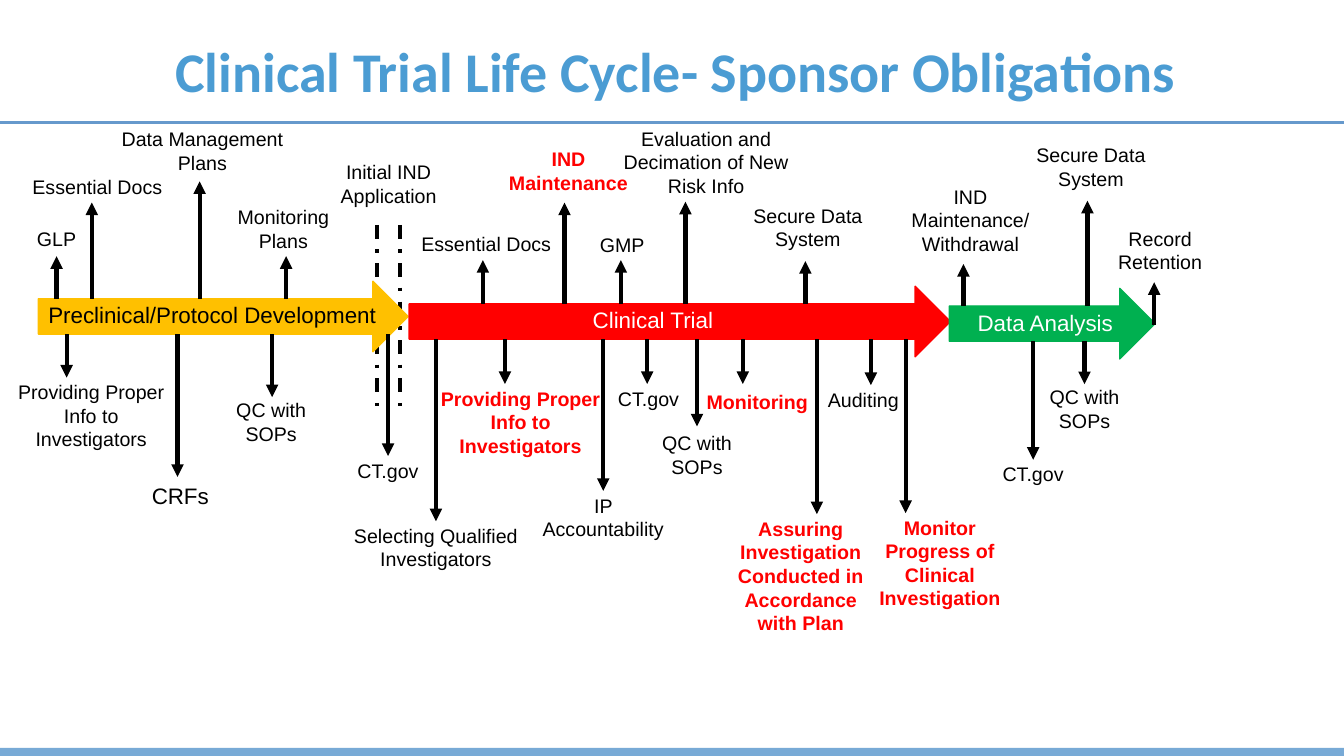
from dataclasses import dataclass
from typing import NamedTuple

from lxml.etree import SubElement
from pptx import Presentation
from pptx.dml.color import RGBColor
from pptx.enum.dml import MSO_LINE as Dash
from pptx.enum.shapes import MSO_CONNECTOR as Connector, MSO_SHAPE as Shape
from pptx.enum.text import MSO_ANCHOR as Anchor, MSO_AUTO_SIZE as AutoSize, PP_ALIGN as Align
from pptx.oxml.ns import qn
from pptx.util import Pt


@dataclass(frozen=True)
class Theme:
    title_blue: str = "4B9CD3"
    rule_blue: str = "6699CC"
    footer_blue: str = "78AAD6"
    black: str = "000000"
    white: str = "FFFFFF"
    amber: str = "FFC000"
    red: str = "FF0000"
    green: str = "00B050"
    title_font: str = "Calibri"
    body_font: str = "Arial"
    title_size: float = 40
    phase_size: float = 16
    label_size: float = 14


THEME = Theme()
PAGE_WIDTH, PAGE_HEIGHT = 960, 540
WIDE, MEDIUM, NARROW = 134.6, 108, 95


class Box(NamedTuple):
    left: float
    top: float
    width: float
    height: float

    def lengths(self):
        return [Pt(value) for value in self]


@dataclass(frozen=True)
class Duty:
    """A label on a stem: reach is negative upwards, shift moves the label off the stem."""
    text: str
    stem: float
    reach: float
    shift: float = 0
    width: float = WIDE
    lines: int = 1
    gap: float = -1.7
    key: bool = False
    size: float = THEME.label_size
    drop: float = 0


@dataclass(frozen=True)
class Phase:
    name: str
    box: Box
    color: str
    text_color: str
    caption_left: float
    caption_width: float
    duties: tuple


PRECLINICAL = Phase(
    "Preclinical/Protocol Development", Box(27.4, 200.9, 264.2, 50.4),
    THEME.amber, THEME.black, 0, 270, (
        Duty("GLP", 13, -30.5, gap=0),
        Duty("Essential Docs", 38.2, -68.8, 4, gap=1),
        Duty("Data Management Plans", 115.2, -84, 2, 140, 2, -0.7),
        Duty("Monitoring Plans", 177, -30.5, -2, NARROW, 2, 1.5),
        Duty("Providing Proper Info to Investigators", 20.2, 31, 17.6, lines=3),
        Duty("CRFs", 99.4, 102, 2, gap=0, size=THEME.phase_size),
        Duty("QC with SOPs", 167, 45, -0.7, NARROW, 2, -3),
        Duty("CT.gov", 249.8, 87),
    ))
TRIAL = Phase(
    "Clinical Trial", Box(292.3, 204.5, 386.6, 50.4),
    THEME.red, THEME.white, 124, 179, (
        Duty("Essential Docs", 52.6, -31.3, 2.5, gap=0.7),
        Duty("IND Maintenance", 110.9, -72.4, 2.9, MEDIUM, 2, key=True),
        Duty("GMP", 151.2, -31.3, 1, gap=1.4),
        Duty("Evaluation and Decimation of New Risk Info", 197.3, -73, 14.8, lines=3, gap=1.4),
        Duty("Secure Data System", 283, -30.6, 1.8, lines=2, gap=-3),
        Duty("Selecting Qualified Investigators", 19.1, 130, lines=2),
        Duty("Providing Proper Info to Investigators", 68.4, 32, 11.2, lines=3, key=True),
        Duty("IP Accountability", 138.6, 108.4, 0, MEDIUM, 2),
        Duty("CT.gov", 170, 32, 1),
        Duty("QC with SOPs", 205.6, 62.3, 0, NARROW, 2, 0),
        Duty("Monitoring", 238.3, 32, 10.4, gap=0.7, key=True),
        Duty("Assuring Investigation Conducted in Accordance with Plan",
             291.2, 125, -11.5, 113, 5, key=True),
        Duty("Auditing", 329.8, 32.8, -5.4),
        Duty("Monitor Progress of Clinical Investigation",
             354.6, 124.2, 24.5, 113, 4, key=True),
    ))
ANALYSIS = Phase(
    "Data Analysis", Box(678.2, 206, 146.9, 50.4),
    THEME.green, THEME.white, 13, 179, (
        Duty("IND Maintenance/ Withdrawal", 10, -30, 5, MEDIUM, 3),
        Duty("Secure Data System", 98.6, -75.2, 2.5, lines=2, gap=-3),
        Duty("Record Retention", 146.2, -17, 4.3, MEDIUM, 2, drop=13.3),
        Duty("CT.gov", 59.8, 84.6),
        Duty("QC with SOPs", 96.5, 30.6, 0, NARROW, 2, -3),
    ))


def add_text(page, box, text, size, color, font=THEME.body_font, bold=False,
             align=Align.CENTER, **frame_format):
    frame = page.shapes.add_textbox(*box.lengths()).text_frame
    for name, value in {"word_wrap": True, "auto_size": AutoSize.SHAPE_TO_FIT_TEXT,
                        **frame_format}.items():
        setattr(frame, name, value)
    para = frame.paragraphs[0]
    para.alignment = align
    span = para.add_run()
    span.text = text
    for name, value in {"size": Pt(size), "name": font, "bold": bold}.items():
        setattr(span.font, name, value)
    span.font.color.rgb = RGBColor.from_string(color)
    return para


def add_block(page, shape, box, color):
    block = page.shapes.add_shape(shape, *box.lengths())
    block.shadow.inherit = False
    block.fill.solid()
    block.fill.fore_color.rgb = RGBColor.from_string(color)
    block.line.color.rgb = RGBColor.from_string(color)
    block.line.width = Pt(1)
    return block


def add_line(page, start, end, color, width, dash=None, arrow=False):
    line = page.shapes.add_connector(
        Connector.STRAIGHT, *[Pt(value) for value in (*start, *end)])
    line.line.color.rgb = RGBColor.from_string(color)
    line.line.width = Pt(width)
    if dash:
        line.line.dash_style = dash
    properties = line.element.spPr
    if arrow:
        SubElement(properties.find(qn("a:ln")), qn("a:tailEnd"), type="triangle")
    SubElement(properties, qn("a:effectLst"))


def label_height(lines):
    return 24.5 + 17 * (lines - 1)


def add_header(page, box):
    bottom = box.top + box.height
    add_line(page, (box.left, bottom), (box.left + box.width, bottom), THEME.rule_blue, 2)
    title = add_text(page, Box(box.left + 13, box.top + 0.7, box.width - 21, 104.4),
                     "Clinical Trial Life Cycle- Sponsor Obligations",
                     THEME.title_size, THEME.title_blue, THEME.title_font, True,
                     auto_size=AutoSize.NONE, vertical_anchor=Anchor.MIDDLE)
    title.line_spacing = 0.9


def add_gate(page, box):
    """Two dashed lines that mark the application, with its label above."""
    for x in (box.left + box.width, box.left):
        add_line(page, (x, box.top), (x, box.top + box.height), THEME.black, 2.5, Dash.DASH_DOT)
    center = box.left + box.width / 2
    add_text(page, Box(center - WIDE / 2, box.top - 49.7, WIDE, label_height(2)),
             "Initial IND Application", THEME.label_size, THEME.black)


def add_duty(page, box, duty):
    up = duty.reach < 0
    x = box.left + duty.stem
    edge = box.top + box.height * (0.25 if up else 0.75)
    tip = edge + duty.reach
    add_line(page, (x, edge + duty.drop), (x, tip), THEME.black, 3, arrow=True)
    height = label_height(duty.lines)
    top = tip + duty.gap - (height if up else 0)
    add_text(page, Box(x + duty.shift - duty.width / 2, top, duty.width, height),
             duty.text, duty.size, THEME.red if duty.key else THEME.black, bold=duty.key)


def add_phase(page, phase):
    box = phase.box
    add_block(page, Shape.RIGHT_ARROW, box, phase.color)
    add_text(page, Box(box.left + phase.caption_left, box.top + 11, phase.caption_width, 26.6),
             phase.name, THEME.phase_size, phase.text_color, align=Align.LEFT)
    for duty in phase.duties:
        add_duty(page, box, duty)


def main():
    deck = Presentation()
    deck.slide_width, deck.slide_height = Pt(PAGE_WIDTH), Pt(PAGE_HEIGHT)
    page = deck.slides.add_slide(deck.slide_layouts[6])
    footer = add_block(page, Shape.RECTANGLE, Box(0, 534.2, PAGE_WIDTH, 5.8), THEME.footer_blue)
    footer.line.fill.background()
    add_header(page, Box(0, 0, PAGE_WIDTH, 87.8))
    add_gate(page, Box(269.3, 160.6, 16.6, 131.8))
    for phase in (PRECLINICAL, TRIAL, ANALYSIS):
        add_phase(page, phase)
    deck.save("out.pptx")


if __name__ == "__main__":
    main()
